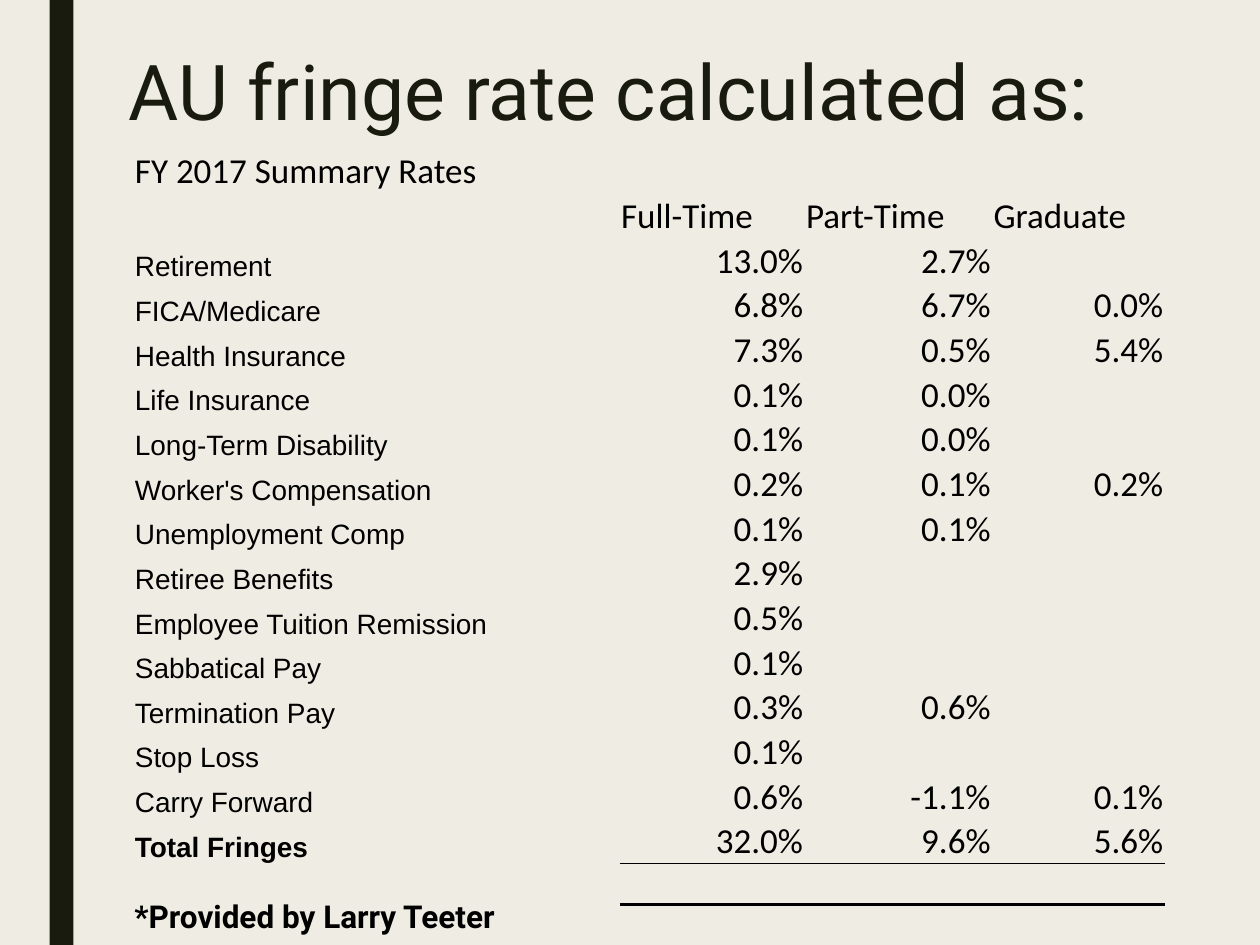
from dataclasses import dataclass

from lxml.etree import SubElement
from pptx import Presentation
from pptx.dml.color import RGBColor as Color
from pptx.enum.shapes import MSO_SHAPE as Shape
from pptx.enum.text import MSO_ANCHOR as Anchor, MSO_AUTO_SIZE as AutoSize, PP_ALIGN as Align
from pptx.oxml import parse_xml
from pptx.oxml.ns import nsdecls, qn
from pptx.util import Cm, Pt


@dataclass(frozen=True)
class Theme:
    paper: str = "EFEDE3"
    dark: str = "191B0E"
    black: str = "000000"
    title_size: int = 44
    figure_size: int = 20
    note_size: int = 18
    label_size: int = 16
    heading_font: str = "Roboto"
    figure_font: str = "Calibri"
    label_font: str = "Arial"


theme = Theme()


def write(frame, text, *, size, font, color=theme.black, bold=False, align=Align.LEFT, spacing=None):
    para = frame.paragraphs[0]
    para.alignment = align
    para.line_spacing = spacing
    span = para.add_run()
    span.text = text
    span.font.size = Pt(size)
    span.font.name = font
    span.font.bold = bold
    span.font.color.rgb = Color.from_string(color)


def add_border(cell, side, points):
    """Put a line on one side ("T" or "B"); add the bottom before the top."""
    line = parse_xml(f'<a:ln{side} {nsdecls("a")} w="{Pt(points)}"/>')
    fill = SubElement(line, qn("a:solidFill"))
    SubElement(fill, qn("a:srgbClr"), val=theme.black)
    cell._tc.get_or_add_tcPr().insert(0, line)


deck = Presentation()
deck.slide_width, deck.slide_height = Cm(25.4), Cm(19.05)
page = deck.slides.add_slide(deck.slide_layouts[5])

# Background and side bar
page.background.fill.solid()
page.background.fill.fore_color.rgb = Color.from_string(theme.paper)
bar = page.shapes.add_shape(Shape.RECTANGLE, Cm(1), 0, Cm(0.48), deck.slide_height)
bar.shadow.inherit = False
bar.fill.solid()
bar.fill.fore_color.rgb = Color.from_string(theme.dark)
bar.line.fill.background()

# Title
title = page.shapes.title
title.left, title.top, title.width, title.height = Cm(2.34), Cm(0.97), Cm(21.92), Cm(4.11)
title.text_frame.vertical_anchor = Anchor.TOP
title.text_frame.auto_size = AutoSize.NONE
write(title.text_frame, "AU fringe rate calculated as:", size=theme.title_size,
      font=theme.heading_font, color=theme.dark, spacing=0.89)

# Rates table: two heading rows, the rates, and an empty closing row
headings = [
    ("FY 2017 Summary Rates", "", "", ""),
    ("", "Full-Time", "Part-Time", "Graduate"),
]
rates = [
    ("Retirement", "13.0%", "2.7%", ""),
    ("FICA/Medicare", "6.8%", "6.7%", "0.0%"),
    ("Health Insurance", "7.3%", "0.5%", "5.4%"),
    ("Life Insurance", "0.1%", "0.0%", ""),
    ("Long-Term Disability", "0.1%", "0.0%", ""),
    ("Worker's Compensation", "0.2%", "0.1%", "0.2%"),
    ("Unemployment Comp", "0.1%", "0.1%", ""),
    ("Retiree Benefits", "2.9%", "", ""),
    ("Employee Tuition Remission", "0.5%", "", ""),
    ("Sabbatical Pay", "0.1%", "", ""),
    ("Termination Pay", "0.3%", "0.6%", ""),
    ("Stop Loss", "0.1%", "", ""),
    ("Carry Forward", "0.6%", "-1.1%", "0.1%"),
    ("Total Fringes", "32.0%", "9.6%", "5.6%"),
]
rows = headings + rates + [("", "", "", "")]
closing_row = len(rows) - 1
total_row = closing_row - 1
column_widths = [9.8, 3.73, 3.78, 3.48]
row_height, closing_height = 0.9, 0.84

table = page.shapes.add_table(
    len(rows), len(column_widths), Cm(2.69), Cm(3), Cm(sum(column_widths)),
    Cm(row_height * closing_row + closing_height)).table
table.first_row = table.horz_banding = False
no_style = "{2D5ABB26-0587-4C30-8999-92F81FD0307C}"
table._tbl.tblPr.find(qn("a:tableStyleId")).text = no_style
for column, width in zip(table.columns, column_widths):
    column.width = Cm(width)

for r, texts in enumerate(rows):
    table.rows[r].height = Cm(closing_height if r == closing_row else row_height)
    for c, text in enumerate(texts):
        cell = table.cell(r, c)
        cell.fill.background()
        cell.vertical_anchor = Anchor.BOTTOM
        cell.margin_left = cell.margin_right = cell.margin_top = Cm(0.03)
        cell.margin_bottom = 0
        is_rate_row = r >= len(headings)
        is_label = is_rate_row and c == 0
        if text:
            write(cell.text_frame, text,
                  size=theme.label_size if is_label else theme.figure_size,
                  font=theme.label_font if is_label else theme.figure_font,
                  bold=is_label and r == total_row,
                  align=Align.RIGHT if is_rate_row and c else Align.LEFT)
table.cell(0, 0).merge(table.cell(0, 1))

# Rules under the totals
for c in range(1, len(column_widths)):
    add_border(table.cell(total_row, c), "B", 0.5)
    add_border(table.cell(closing_row, c), "B", 2)
    add_border(table.cell(closing_row, c), "T", 0.5)

# Credit line
credit = page.shapes.add_textbox(Cm(2.46), Cm(17.96), Cm(8.64), Cm(1.02)).text_frame
credit.word_wrap = True
credit.auto_size = AutoSize.SHAPE_TO_FIT_TEXT
write(credit, "*Provided by Larry Teeter", size=theme.note_size,
      font=theme.heading_font, bold=True)

deck.save("out.pptx")
